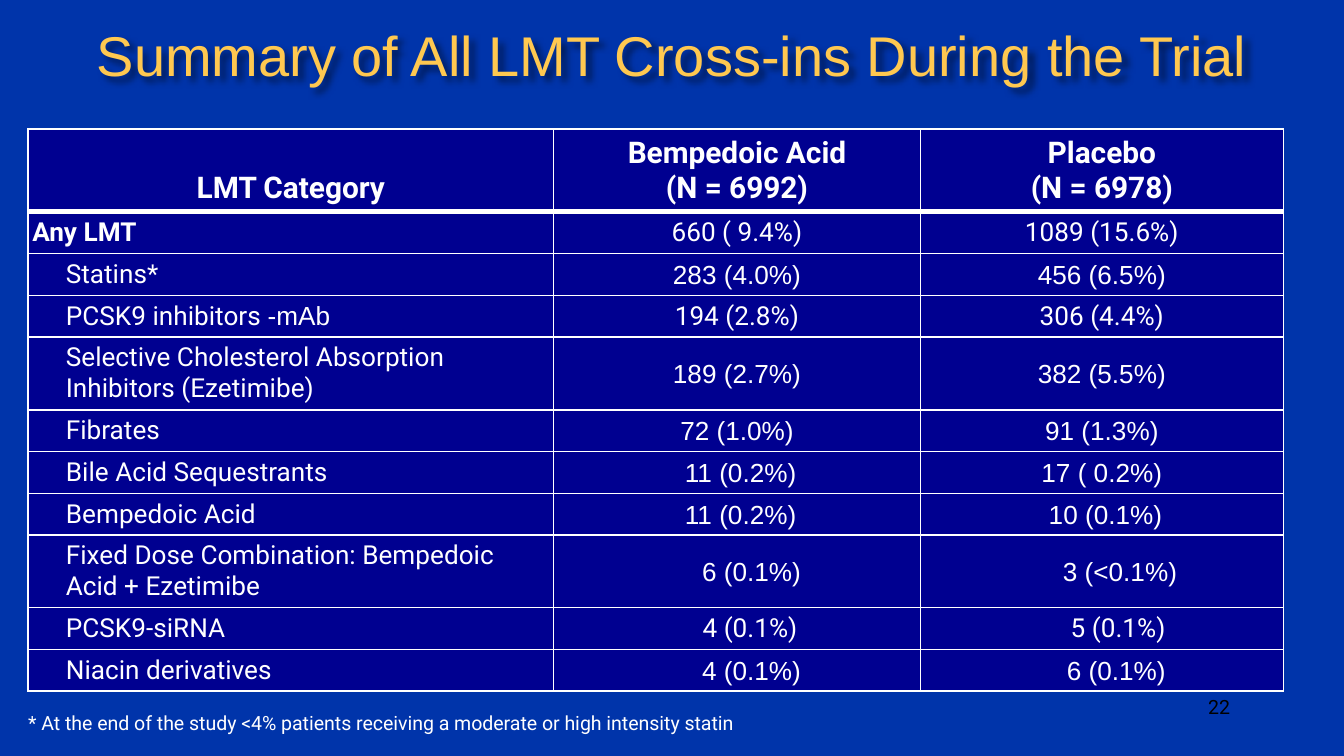
"""Build the slide that summarises LMT cross-ins by trial arm."""
from dataclasses import dataclass

from lxml import etree
from pptx import Presentation
from pptx import util as u
from pptx.dml.color import RGBColor
from pptx.enum import text
from pptx.oxml import ns

COLORS = {"background": "0034AA", "cell": "000090", "white": "FFFFFF",
          "title": "FFC850", "black": "000000"}
ROBOTO, ARIAL = "Roboto", "Arial"
CENTER, LEFT, RIGHT = text.PP_ALIGN.CENTER, text.PP_ALIGN.LEFT, text.PP_ALIGN.RIGHT
MIDDLE, BOTTOM = text.MSO_ANCHOR.MIDDLE, text.MSO_ANCHOR.BOTTOM
COLUMN_WIDTHS = (281.5, 196.5, 194.4)
HEADER_HEIGHT, ROW_HEIGHT, TALL_ROW_HEIGHT = 43.2, 20.9, 36.7
THIN, THICK = 1, 3


@dataclass(frozen=True)
class Style:
    font: str = ROBOTO
    size: float = 14
    bold: bool = False
    color: str = "white"
    align: text.PP_ALIGN = CENTER
    indent: float = 0
    snug: bool = False


@dataclass(frozen=True)
class Category:
    label: str
    bempedoic: str
    placebo: str
    font: str = ARIAL
    nudges: tuple[float, float] = (0, 0)
    height: float = ROW_HEIGHT
    top_level: bool = False
    suffix: str = ""


HEADERS = ("LMT Category", "Bempedoic Acid\n(N = 6992)", "Placebo\n(N = 6978)")
CATEGORIES = (
    Category("Any LMT", "660 ( 9.4%)", "1089 (15.6%)", ROBOTO, top_level=True),
    Category("Statins*", "283 (4.0%)", "456 (6.5%)"),
    Category("PCSK9 inhibitors ", "194 (2.8%)", "306 (4.4%)", ROBOTO, suffix="-mAb"),
    Category("Selective Cholesterol Absorption Inhibitors (Ezetimibe)",
             "189 (2.7%)", "382 (5.5%)", height=TALL_ROW_HEIGHT),
    Category("Fibrates", "72 (1.0%)", "91 (1.3%)"),
    Category("Bile Acid Sequestrants", "11 (0.2%)", "17 ( 0.2%)", nudges=(3.9, 0)),
    Category("Bempedoic Acid", "11 (0.2%)", "10 (0.1%)", nudges=(3.9, 3.9)),
    Category("Fixed Dose Combination: Bempedoic Acid + Ezetimibe",
             "6 (0.1%)", "3 (<0.1%)", nudges=(15.6, 19.5), height=TALL_ROW_HEIGHT),
    Category("PCSK9-siRNA", "4 (0.1%)", "5 (0.1%)", ROBOTO, (13.9, 17.4)),
    Category("Niacin derivatives", "4 (0.1%)", "6 (0.1%)", nudges=(15.6, 15.6)),
)


def rgb(name: str) -> RGBColor:
    return RGBColor.from_string(COLORS[name])


def write(frame, wording: str, style: Style) -> None:
    frame.text = wording
    for paragraph in frame.paragraphs:
        paragraph.alignment = style.align
        if style.indent:
            properties = paragraph._p.get_or_add_pPr()
            properties.set("marL", str(u.Pt(style.indent)))
            properties.set("indent", "0")
        if style.snug:
            paragraph.line_spacing = 1.07
            paragraph.space_before = paragraph.space_after = u.Pt(0.5)
        for run in paragraph.runs:
            format_run(run, style)


def format_run(run, style: Style) -> None:
    run.font.name = style.font
    run.font.size = u.Pt(style.size)
    run.font.bold = style.bold
    run.font.color.rgb = rgb(style.color)


def set_margins(area, horizontal: float, vertical: float) -> None:
    area.margin_left = area.margin_right = u.Pt(horizontal)
    area.margin_top = area.margin_bottom = u.Pt(vertical)


def add_borders(cell, top: float, bottom: float) -> None:
    sides = (("lnL", THIN), ("lnR", THIN), ("lnT", top), ("lnB", bottom))
    for position, (side, width) in enumerate(sides):
        line = etree.Element(ns.qn(f"a:{side}"), w=str(u.Pt(width)))
        fill = etree.SubElement(line, ns.qn("a:solidFill"))
        etree.SubElement(fill, ns.qn("a:srgbClr"), val=COLORS["white"])
        cell._tc.get_or_add_tcPr().insert(position, line)


def fill_cell(cell, wording: str, style: Style, top: float = THIN,
              bottom: float = THIN, anchor=MIDDLE, padding: float = 2.9) -> None:
    cell.fill.solid()
    cell.fill.fore_color.rgb = rgb("cell")
    cell.vertical_anchor = anchor
    if style.snug:
        set_margins(cell, 0.7, 0)
    else:
        set_margins(cell, 2.2, padding)
    write(cell.text_frame, wording, style)
    add_borders(cell, top, bottom)


def add_title(slide) -> None:
    title = slide.shapes.title
    title.left, title.top, title.width, title.height = map(u.Pt, (0, 5, 720, 48.2))
    title.fill.background()
    title.text_frame.vertical_anchor = MIDDLE
    write(title.text_frame, "Summary of All LMT Cross-ins During the Trial",
          Style(ARIAL, 30, color="title"))
    effects = etree.SubElement(title._element.spPr, ns.qn("a:effectLst"))
    shadow = etree.SubElement(effects, ns.qn("a:outerShdw"), blurRad=str(u.Pt(4)),
                              dist=str(u.Pt(3)), dir="2700000", algn="tl")
    shade = etree.SubElement(shadow, ns.qn("a:srgbClr"), val=COLORS["black"])
    etree.SubElement(shade, ns.qn("a:alpha"), val="50000")


def add_summary_table(slide) -> None:
    heights = (HEADER_HEIGHT, *(category.height for category in CATEGORIES))
    summary = slide.shapes.add_table(
        len(heights), len(COLUMN_WIDTHS), u.Pt(15.1), u.Pt(69.1),
        u.Pt(sum(COLUMN_WIDTHS)), u.Pt(sum(heights))).table
    summary.horz_banding = False
    for column, width in zip(summary.columns, COLUMN_WIDTHS):
        column.width = u.Pt(width)
    for row, height in zip(summary.rows, heights):
        row.height = u.Pt(height)
    for column, heading in enumerate(HEADERS):
        fill_cell(summary.cell(0, column), heading, Style(size=16, bold=True),
                  bottom=THICK, anchor=MIDDLE if column else BOTTOM, padding=3.6)
    for row, category in enumerate(CATEGORIES, start=1):
        top = THICK if row == 1 else THIN
        label_style = Style(bold=category.top_level, align=LEFT,
                            indent=0 if category.top_level else 18)
        label_cell = summary.cell(row, 0)
        fill_cell(label_cell, category.label, label_style, top)
        if category.suffix:
            suffix = label_cell.text_frame.paragraphs[0].add_run()
            suffix.text = category.suffix
            format_run(suffix, Style(ARIAL))
        counts = (category.bempedoic, category.placebo)
        for column, (count, nudge) in enumerate(zip(counts, category.nudges), start=1):
            fill_cell(summary.cell(row, column), count,
                      Style(category.font, indent=nudge, snug=category.font == ARIAL), top)


def add_note(slide, wording: str, box: tuple[float, ...], style: Style,
             margins: tuple[float, float], wrap: bool) -> None:
    note = slide.shapes.add_textbox(*map(u.Pt, box)).text_frame
    note.word_wrap = wrap
    set_margins(note, *margins)
    write(note, wording, style)


def main() -> None:
    deck = Presentation()
    deck.slide_width, deck.slide_height = u.Pt(720), u.Pt(405)
    slide = deck.slides.add_slide(deck.slide_layouts[5])
    slide.background.fill.solid()
    slide.background.fill.fore_color.rgb = rgb("background")
    add_title(slide)
    add_summary_table(slide)
    add_note(slide, "22", (516.2, 368.6, 149.8, 27.4),
             Style(size=10.5, color="black", align=RIGHT), (7.2, 3.6), True)
    add_note(slide, "* At the end of the study <4% patients receiving a moderate "
             "or high intensity statin", (15.1, 380.9, 439.2, 18.7),
             Style(size=10.5, align=LEFT), (0, 0), False)
    deck.save("out.pptx")


if __name__ == "__main__":
    main()
